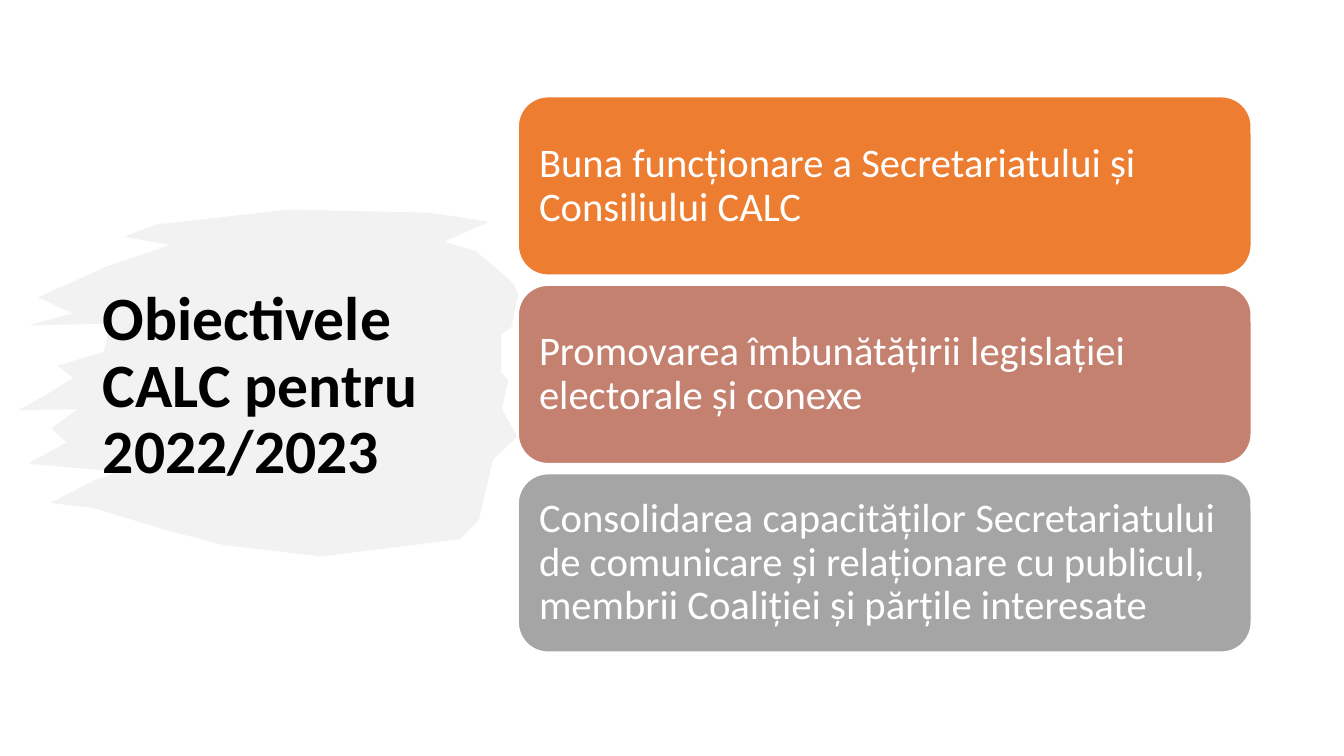
"""Build the slide of CALC goals for 2022/2023."""
from dataclasses import dataclass

from lxml.etree import SubElement
from pptx import Presentation
from pptx.dml.color import RGBColor as RGB
from pptx.enum.shapes import MSO_SHAPE as Shape
from pptx.enum.text import MSO_ANCHOR as Anchor, MSO_AUTO_SIZE as Fit, PP_ALIGN as Align
from pptx.oxml.ns import qn
from pptx.util import Inches, Pt

BLACK = RGB(0x00, 0x00, 0x00)
WHITE = RGB(0xFF, 0xFF, 0xFF)
PAINT = RGB(0xE7, 0xE6, 0xE6)
ORANGE = RGB(0xED, 0x7D, 0x31)
ROSE = RGB(0xC4, 0x81, 0x70)
GREY = RGB(0xA5, 0xA5, 0xA5)

FONT = "Calibri"
LEFT, TOP, WIDTH, HEIGHT, GAP = 5.14, 0.96, 7.27, 1.77, 0.1

BRUSH = [
    (2.86, 2.08), (4.25, 2.11), (4.85, 2.2), (4.4, 2.4), (4.72, 2.49),
    (5.09, 2.81), (5.14, 2.92), (5.07, 3.25), (4.97, 3.32), (4.97, 3.69),
    (5.04, 3.77), (4.98, 4.06), (5.13, 4.33), (4.89, 4.56), (4.75, 5.16),
    (4.56, 5.35), (3.19, 5.52), (2.23, 5.41), (1.65, 5.26), (0.93, 5.04),
    (0.5, 4.99), (0.93, 4.77), (1.18, 4.68), (0.28, 4.6), (0.66, 4.39),
    (0.51, 4.25), (0.77, 4.06), (0.18, 4.07), (0.47, 3.91), (0.73, 3.75),
    (0.57, 3.63), (1.03, 3.49), (1.1, 3.21), (0.28, 3.23), (0.72, 3.11),
    (0.38, 2.95), (1.07, 2.64), (1.69, 2.43), (1.23, 2.35), (1.54, 2.23),
]


@dataclass
class Goal:
    """One goal and the colour of its card."""
    text: str
    color: RGB


GOALS = [
    Goal("Buna funcționare a Secretariatului și Consiliului CALC", ORANGE),
    Goal("Promovarea îmbunătățirii legislației electorale și conexe", ROSE),
    Goal("Consolidarea capacităților Secretariatului de comunicare și relaționare "
         "cu publicul, membrii Coaliției și părțile interesate", GREY),
]


def write(shape, text: str, *, size: float, color: RGB, bold: bool = False,
          inset: float = 0.1, pad: float = 0.05) -> None:
    """Fill a shape with left-aligned, vertically centred text."""
    frame = shape.text_frame
    frame.word_wrap = True
    frame.auto_size = Fit.NONE
    frame.vertical_anchor = Anchor.MIDDLE
    frame.margin_left = frame.margin_right = Inches(inset)
    frame.margin_top = frame.margin_bottom = Inches(pad)
    para = frame.paragraphs[0]
    para.alignment = Align.LEFT
    para.line_spacing = 0.9
    run = para.add_run()
    run.text = text
    font = run.font
    font.name, font.size, font.bold = FONT, Pt(size), bold
    font.color.rgb = color


def paint(slide):
    """Draw the half-clear brush stroke."""
    points = [(Inches(x), Inches(y)) for x, y in BRUSH]
    pen = slide.shapes.build_freeform(*points[0], scale=1.0)
    pen.add_line_segments(points[1:], close=True)
    brush = pen.convert_to_shape()
    brush.shadow.inherit = False
    brush.line.fill.background()
    brush.fill.solid()
    brush.fill.fore_color.rgb = PAINT
    tint = next(brush.element.iter(qn("a:srgbClr")))
    SubElement(tint, qn("a:alpha"), val="50000")
    return brush


def card(slide, goal: Goal, row: int) -> None:
    """Draw the rounded card of a goal in its row."""
    top = TOP + row * (HEIGHT + GAP)
    box = slide.shapes.add_shape(Shape.ROUNDED_RECTANGLE, Inches(LEFT), Inches(top),
                                 Inches(WIDTH), Inches(HEIGHT))
    box.shadow.inherit = False
    box.fill.solid()
    box.fill.fore_color.rgb = goal.color
    box.line.color.rgb = WHITE
    box.line.width = Pt(1)
    write(box, goal.text, size=29, color=WHITE, inset=0.12, pad=0.12)


def main() -> None:
    """Build and save the deck."""
    deck = Presentation()
    deck.slide_width, deck.slide_height = Inches(13.33), Inches(7.5)
    slide = deck.slides.add_slide(deck.slide_layouts[5])
    title = slide.shapes.title
    title.left, title.top = Inches(0.92), Inches(1.64)
    title.width, title.height = Inches(4.08), Inches(4.4)
    write(title, "Obiectivele CALC pentru 2022/2023", size=44, color=BLACK, bold=True)
    title.element.addprevious(paint(slide).element)
    for row, goal in enumerate(GOALS):
        card(slide, goal, row)
    deck.save("out.pptx")


if __name__ == "__main__":
    main()
